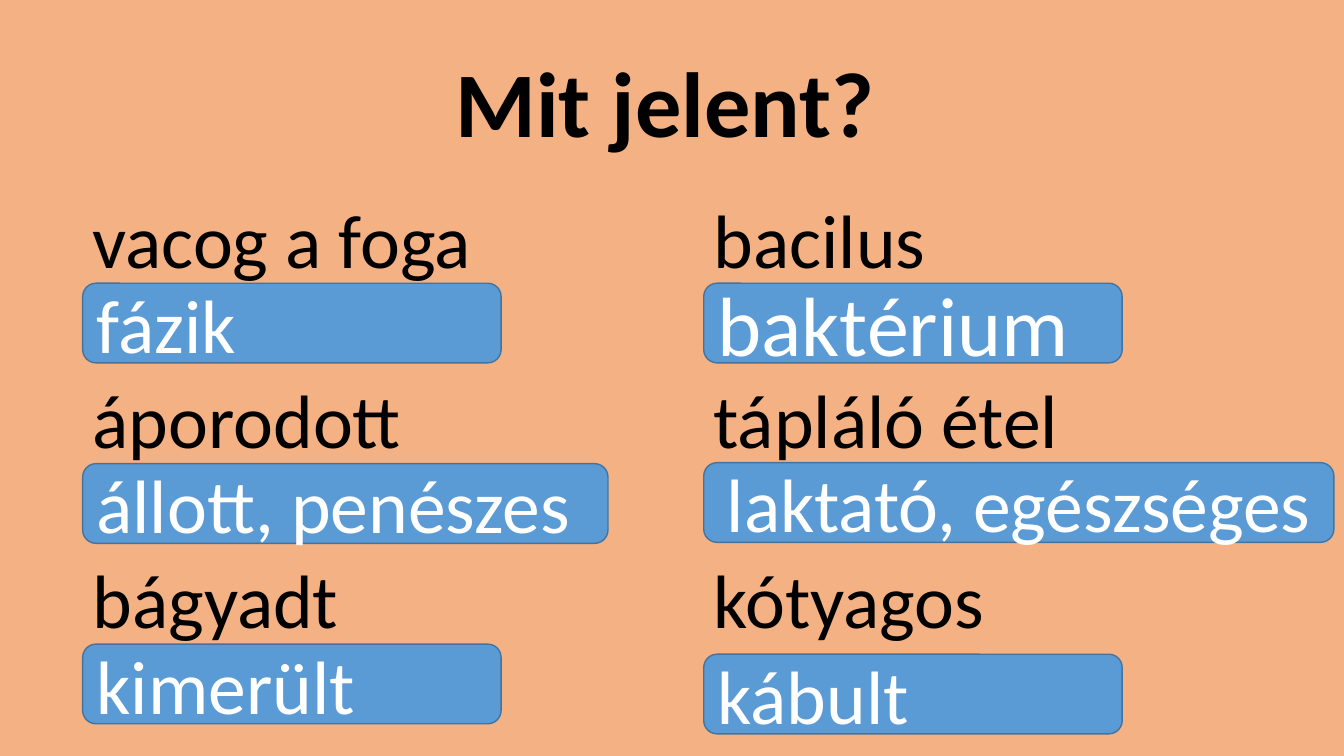
from dataclasses import dataclass

from pptx import Presentation
from pptx.dml.color import RGBColor
from pptx.enum.shapes import MSO_SHAPE
from pptx.enum.text import MSO_ANCHOR, PP_ALIGN
from pptx.util import Inches, Pt


@dataclass(frozen=True)
class Theme:
    font: str = "Calibri"
    back: str = "F4B183"
    ink: str = "000000"
    light: str = "FFFFFF"
    fill: str = "5B9BD5"
    edge: str = "43739E"
    title: int = 66
    body: int = 54
    large: int = 60
    gap: int = 64


@dataclass(frozen=True)
class Pair:
    word: str
    answer: str
    width: float = 4.15
    size: int = Theme.body
    align: PP_ALIGN = PP_ALIGN.LEFT
    shift: float = 0


THEME = Theme()
WIDE, HIGH = 13.33, 7.5
TOP, COL_W, COL_H = 1.86, 4.67, 5.32
LEFTS = (0.82, 6.98)
BAR_TOP, BAR_H, PITCH = 0.95, 0.79, 1.79

COLUMNS = (
    (
        Pair("vacog a foga", "fázik"),
        Pair("áporodott", "állott, penészes", width=5.21),
        Pair("bágyadt", "kimerült"),
    ),
    (
        Pair("bacilus", "baktérium", size=THEME.large),
        Pair("tápláló étel", "laktató, egészséges", width=6.25,
             align=PP_ALIGN.CENTER, shift=-0.01),
        Pair("kótyagos", "kábult", shift=0.1),
    ),
)


def color(code):
    return RGBColor.from_string(code)


def write(shape, lines, size=THEME.body, ink=THEME.ink, bold=False,
          align=PP_ALIGN.LEFT, anchor=MSO_ANCHOR.TOP, gap=0):
    """Fill a shape with one paragraph per line."""
    frame = shape.text_frame
    frame.word_wrap = True
    frame.vertical_anchor = anchor
    for i, line in enumerate(lines):
        para = frame.paragraphs[0] if i == 0 else frame.add_paragraph()
        para.alignment = align
        para.space_after = Pt(gap)
        run = para.add_run()
        run.text = line
        font = run.font
        font.name, font.size, font.bold = THEME.font, Pt(size), bold
        font.color.rgb = color(ink)


def text_box(slide, box, lines, **style):
    shape = slide.shapes.add_textbox(*map(Inches, box))
    write(shape, lines, **style)


def answer_bar(slide, box, pair):
    bar = slide.shapes.add_shape(MSO_SHAPE.ROUNDED_RECTANGLE,
                                 *map(Inches, box))
    bar.shadow.inherit = False
    bar.fill.solid()
    bar.fill.fore_color.rgb = color(THEME.fill)
    bar.line.color.rgb = color(THEME.edge)
    bar.line.width = Pt(1)
    write(bar, [pair.answer], size=pair.size, ink=THEME.light,
          align=pair.align, anchor=MSO_ANCHOR.MIDDLE)


def word_column(slide, box, pairs):
    """Place the words, with each answer below its word."""
    left, top = box[:2]
    text_box(slide, box, [pair.word for pair in pairs], gap=THEME.gap)
    for row, pair in enumerate(pairs):
        y = top + BAR_TOP + row * PITCH + pair.shift
        answer_bar(slide, (left, y, pair.width, BAR_H), pair)


def quiz_slide(deck):
    slide = deck.slides.add_slide(deck.slide_layouts[6])
    back = slide.background.fill
    back.solid()
    back.fore_color.rgb = color(THEME.back)
    text_box(slide, (3.74, 0.4, 5.71, 1.21), ["Mit jelent?"],
             size=THEME.title, bold=True, align=PP_ALIGN.CENTER)
    for left, pairs in zip(LEFTS, COLUMNS):
        word_column(slide, (left, TOP, COL_W, COL_H), pairs)


def main():
    deck = Presentation()
    deck.slide_width, deck.slide_height = Inches(WIDE), Inches(HIGH)
    quiz_slide(deck)
    deck.save("out.pptx")


if __name__ == "__main__":
    main()
